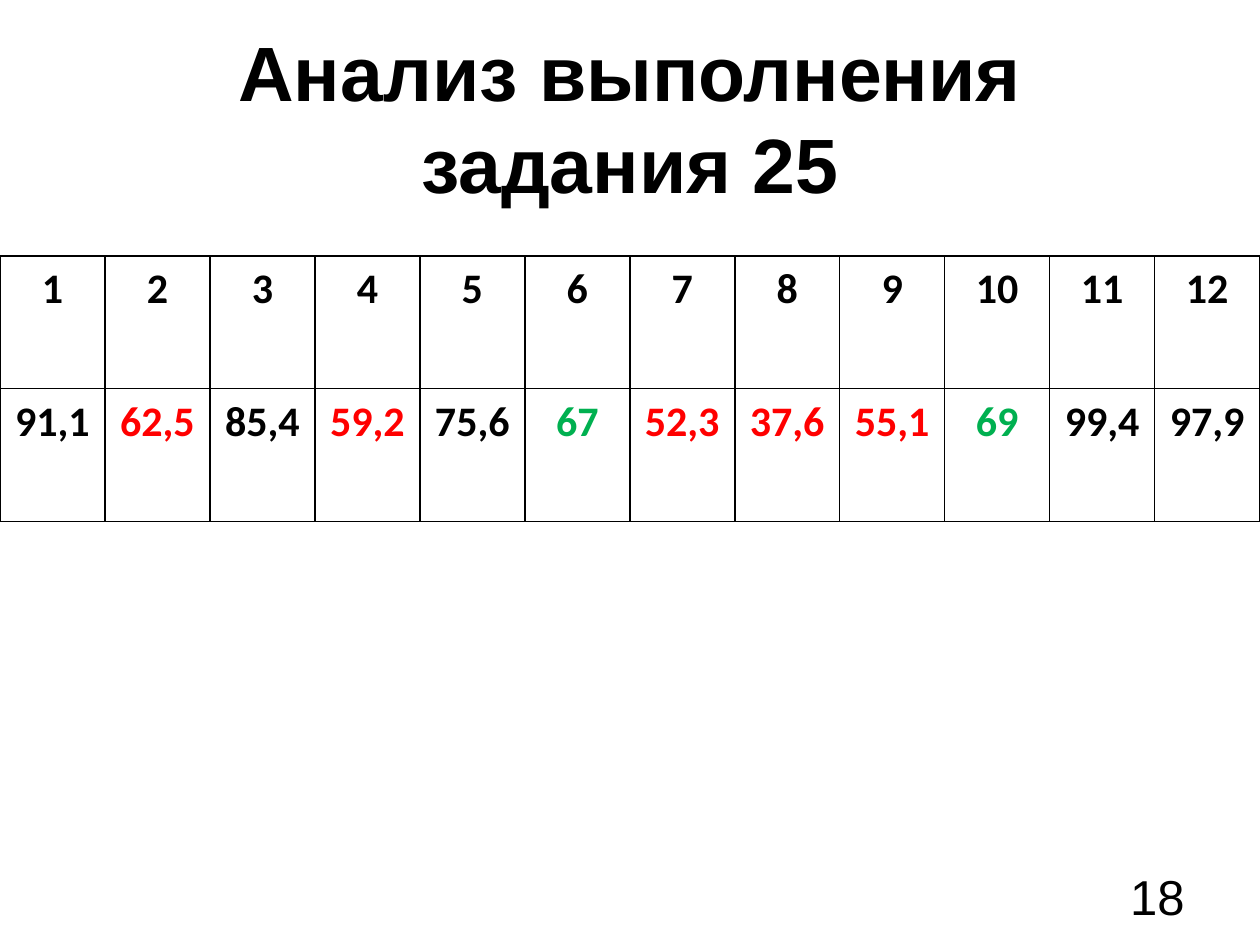
from dataclasses import dataclass

from lxml.etree import SubElement
from pptx import Presentation
from pptx.dml.color import RGBColor
from pptx.enum.text import MSO_ANCHOR, PP_ALIGN
from pptx.oxml.ns import qn
from pptx.util import Inches, Pt


@dataclass(frozen=True)
class Theme:
    black: str = "000000"
    red: str = "FF0000"
    green: str = "00B050"
    text_font: str = "Arial"
    table_font: str = "Calibri"
    title_size: int = 44
    number_size: int = 28
    table_size: int = 24
    border_width: int = 1


THEME = Theme()
RESULTS = ["91,1", "62,5", "85,4", "59,2", "75,6", "67",
           "52,3", "37,6", "55,1", "69", "99,4", "97,9"]


def format_text(paragraph, font_name, size, align, color=THEME.black, bold=False):
    paragraph.alignment = align
    for run in paragraph.runs:
        run.font.name = font_name
        run.font.size = Pt(size)
        run.font.bold = bold
        run.font.color.rgb = RGBColor.from_string(color)


def add_title(slide, text):
    title = slide.shapes.title
    title.left, title.top = Inches(0.5), Inches(0.3)
    title.width, title.height = Inches(9), Inches(1.25)
    frame = title.text_frame
    frame.text = text
    frame.word_wrap = True
    frame.vertical_anchor = MSO_ANCHOR.MIDDLE
    format_text(frame.paragraphs[0], THEME.text_font, THEME.title_size,
                PP_ALIGN.CENTER, bold=True)


def add_page_number(slide, text):
    page_number = slide.shapes.add_textbox(
        Inches(7.17), Inches(6.83), Inches(2.33), Inches(0.52))
    frame = page_number.text_frame
    frame.text = text
    frame.word_wrap = True
    format_text(frame.paragraphs[0], THEME.text_font, THEME.number_size,
                PP_ALIGN.RIGHT)


def add_borders(cell):
    properties = cell._tc.get_or_add_tcPr()
    for side in ("a:lnL", "a:lnR", "a:lnT", "a:lnB"):
        border = SubElement(properties, qn(side), w=str(Pt(THEME.border_width)))
        fill = SubElement(border, qn("a:solidFill"))
        SubElement(fill, qn("a:srgbClr"), val=THEME.black)


def fill_cell(cell, text, color):
    add_borders(cell)
    cell.fill.background()
    cell.margin_left = cell.margin_right = Inches(0.07)
    cell.margin_top = cell.margin_bottom = 0
    cell.text_frame.text = text
    paragraph = cell.text_frame.paragraphs[0]
    paragraph.line_spacing = 1.15
    format_text(paragraph, THEME.table_font, THEME.table_size,
                PP_ALIGN.CENTER, color, bold=True)


def result_color(result):
    percent = float(result.replace(",", "."))
    if percent < 65:
        return THEME.red
    return THEME.green if percent < 70 else THEME.black


def add_results_table(slide, results):
    table = slide.shapes.add_table(
        2, len(results), 0, Inches(2.03), Inches(10), Inches(2.11)).table
    table.first_row = table.horz_banding = False
    for column, result in enumerate(results):
        fill_cell(table.cell(0, column), str(column + 1), THEME.black)
        fill_cell(table.cell(1, column), result, result_color(result))


def main():
    presentation = Presentation()
    presentation.slide_width = Inches(10)
    presentation.slide_height = Inches(7.5)
    slide = presentation.slides.add_slide(presentation.slide_layouts[5])
    add_title(slide, "Анализ выполнения задания 25")
    add_page_number(slide, "18")
    add_results_table(slide, RESULTS)
    presentation.save("out.pptx")


if __name__ == "__main__":
    main()
